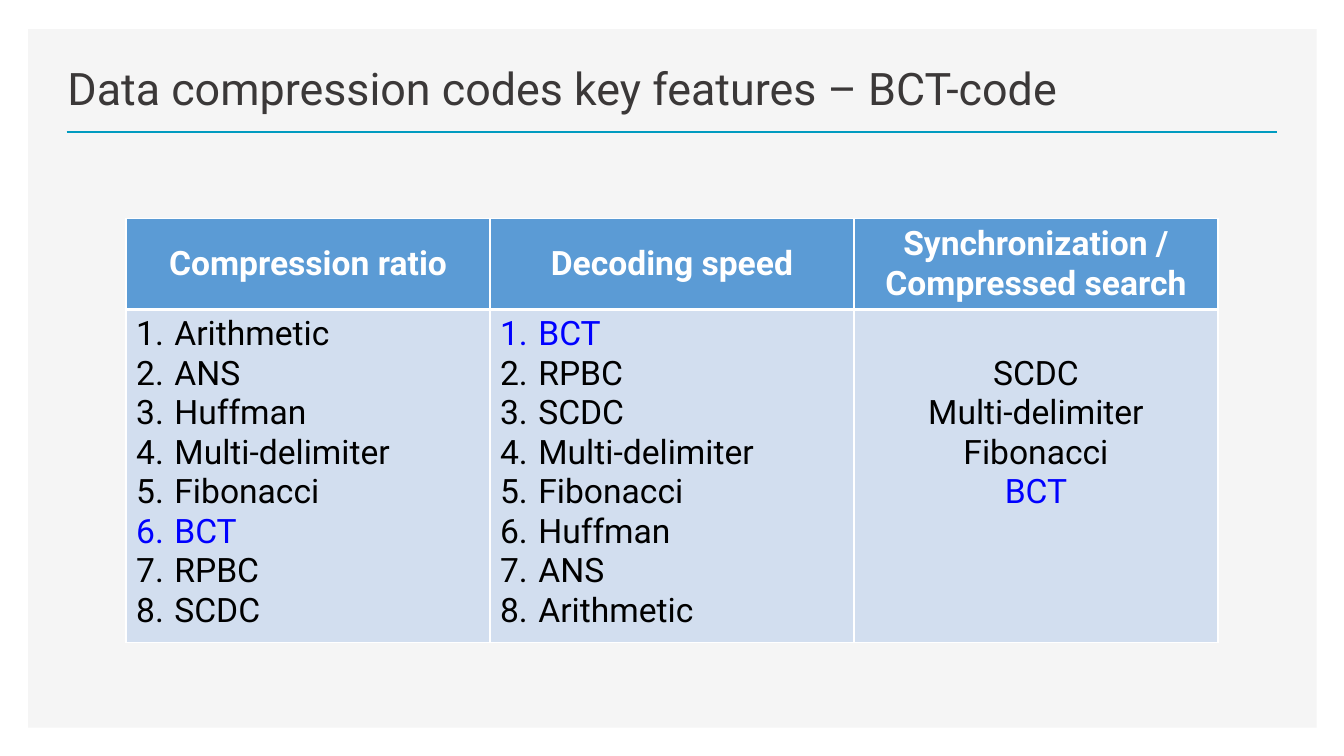
import lxml.etree
import pptx
import pptx.dml.color
import pptx.enum.shapes
import pptx.enum.text
import pptx.oxml.ns
import pptx.util

Inches = pptx.util.Inches
Pt = pptx.util.Pt
ALIGN = pptx.enum.text.PP_ALIGN
ANCHOR = pptx.enum.text.MSO_ANCHOR
qn = pptx.oxml.ns.qn

COLORS = {
    "panel": "F5F5F5", "rule": "009BC0", "title": "3B3838",
    "header": "5B9BD5", "body": "D2DEEF", "border": "FFFFFF",
    "header_text": "FFFFFF", "text": "000000", "highlight": "0000FF",
}
TITLE_FONT = {"name": "Roboto", "size": Pt(32), "bold": False}
HEADER_FONT = {"name": "Roboto", "size": Pt(24), "bold": True}
BODY_FONT = {"name": "Roboto", "size": Pt(24), "bold": False}

HIGHLIGHTED = "BCT"
# Heading, entries, whether the entries are ranked
COLUMNS = [
    ("Compression ratio",
     ["Arithmetic", "ANS", "Huffman", "Multi-delimiter",
      "Fibonacci", "BCT", "RPBC", "SCDC"], True),
    ("Decoding speed",
     ["BCT", "RPBC", "SCDC", "Multi-delimiter",
      "Fibonacci", "Huffman", "ANS", "Arithmetic"], True),
    ("Synchronization /\nCompressed search",
     ["SCDC", "Multi-delimiter", "Fibonacci", "BCT"], False),
]
COLUMN_WIDTH = 3.61
HEADER_HEIGHT, BODY_HEIGHT = 0.88, 3.23
UNRANKED_TOP = 0.44  # starts the unranked entries level with rank 2


def rgb(color):
    return pptx.dml.color.RGBColor.from_string(COLORS[color])


def write(paragraph, text, font_format, color, align=ALIGN.LEFT):
    paragraph.text = text
    paragraph.alignment = align
    for run in paragraph.runs:
        for attribute, value in font_format.items():
            setattr(run.font, attribute, value)
        run.font.color.rgb = rgb(color)


def number(paragraph):
    properties = paragraph._p.get_or_add_pPr()
    properties.set("marL", str(Inches(0.38)))
    properties.set("indent", str(-Inches(0.38)))
    font = lxml.etree.SubElement(properties, qn("a:buFont"))
    font.set("typeface", "+mj-lt")
    numbering = lxml.etree.SubElement(properties, qn("a:buAutoNum"))
    numbering.set("type", "arabicPeriod")


def style_cell(cell, fill, border_widths):
    properties = cell._tc.get_or_add_tcPr()
    for side, width in border_widths.items():
        line = lxml.etree.SubElement(properties, qn(f"a:ln{side}"))
        line.set("w", str(Pt(width)))
        solid = lxml.etree.SubElement(line, qn("a:solidFill"))
        color = lxml.etree.SubElement(solid, qn("a:srgbClr"))
        color.set("val", COLORS["border"])
    cell.fill.solid()
    cell.fill.fore_color.rgb = rgb(fill)


def add_panel(slide):
    panel = slide.shapes.add_shape(
        pptx.enum.shapes.MSO_SHAPE.RECTANGLE,
        Inches(0.28), Inches(0.29), Inches(12.78), Inches(6.93))
    panel.shadow.inherit = False
    panel.fill.solid()
    panel.fill.fore_color.rgb = rgb("panel")
    panel.line.fill.background()


def add_rule(slide):
    rule = slide.shapes.add_connector(
        pptx.enum.shapes.MSO_CONNECTOR.STRAIGHT,
        Inches(0.66), Inches(1.31), Inches(12.67), Inches(1.31))
    rule.line.color.rgb = rgb("rule")
    rule.line.width = Pt(2)
    lxml.etree.SubElement(rule._element.spPr, qn("a:effectLst"))


def add_title(slide, text):
    title = slide.shapes.add_textbox(
        Inches(0.57), Inches(0.49), Inches(11.93), Inches(0.7)).text_frame
    title.word_wrap = True
    title.vertical_anchor = ANCHOR.BOTTOM
    write(title.paragraphs[0], text, TITLE_FONT, "title")


def add_entries(cell, entries, ranked):
    if not ranked:
        cell.margin_top = Inches(UNRANKED_TOP)
    frame = cell.text_frame
    for index, entry in enumerate(entries):
        paragraph = frame.add_paragraph() if index else frame.paragraphs[0]
        color = "highlight" if entry == HIGHLIGHTED else "text"
        write(paragraph, entry, BODY_FONT, color,
              ALIGN.LEFT if ranked else ALIGN.CENTER)
        if ranked:
            number(paragraph)


def add_comparison(slide):
    comparison = slide.shapes.add_table(
        2, len(COLUMNS), Inches(1.25), Inches(2.17),
        Inches(COLUMN_WIDTH * len(COLUMNS)),
        Inches(HEADER_HEIGHT + BODY_HEIGHT)).table
    comparison.rows[0].height = Inches(HEADER_HEIGHT)
    comparison.rows[1].height = Inches(BODY_HEIGHT)
    for index, (heading, entries, ranked) in enumerate(COLUMNS):
        comparison.columns[index].width = Inches(COLUMN_WIDTH)
        header, body = (comparison.cell(row, index) for row in range(2))
        style_cell(header, "header", {"L": 1, "R": 1, "T": 1, "B": 3})
        style_cell(body, "body", {"L": 1, "R": 1, "T": 3, "B": 1})
        header.vertical_anchor = ANCHOR.MIDDLE
        write(header.text_frame.paragraphs[0], heading, HEADER_FONT,
              "header_text", ALIGN.CENTER)
        add_entries(body, entries, ranked)


def main():
    presentation = pptx.Presentation()
    presentation.slide_width = Inches(13.33)
    presentation.slide_height = Inches(7.5)
    slide = presentation.slides.add_slide(presentation.slide_layouts[6])

    # Background and heading
    add_panel(slide)
    add_rule(slide)
    add_title(slide, "Data compression codes key features – BCT-code")

    # Code rankings
    add_comparison(slide)

    presentation.save("out.pptx")


if __name__ == "__main__":
    main()
